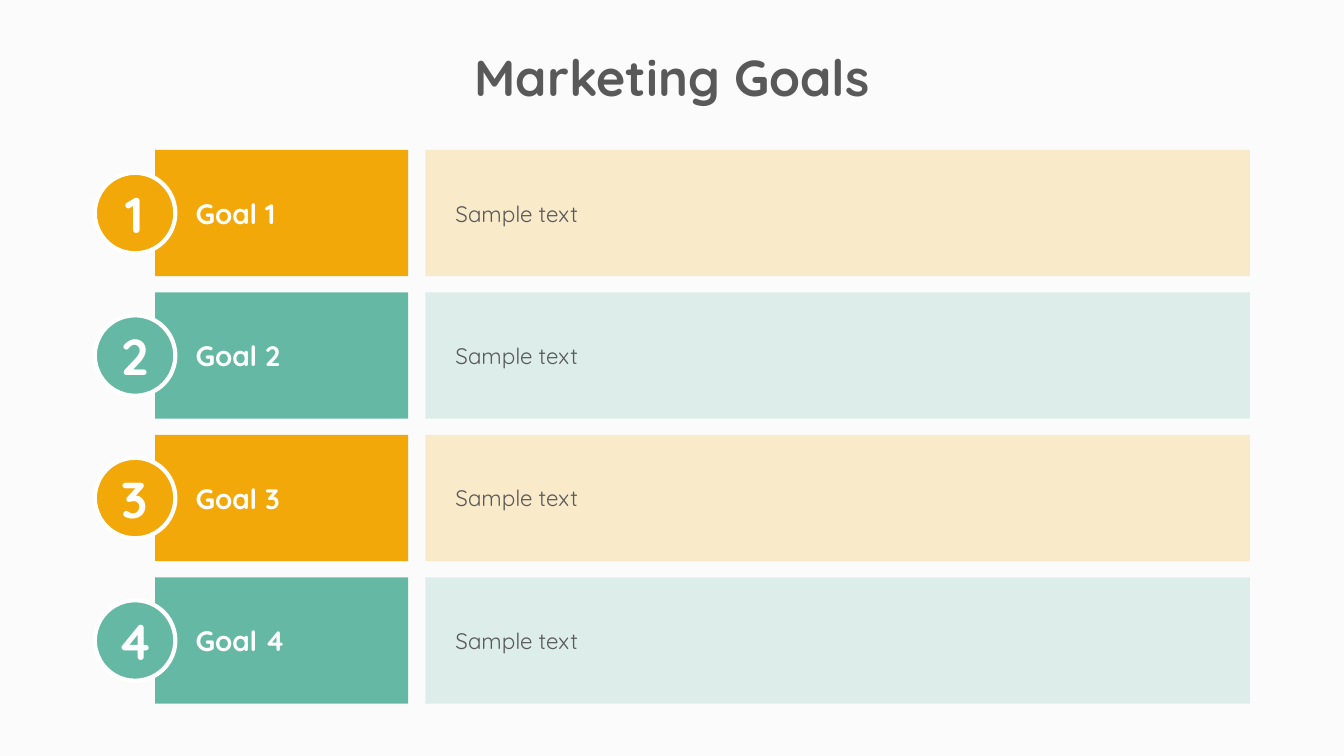
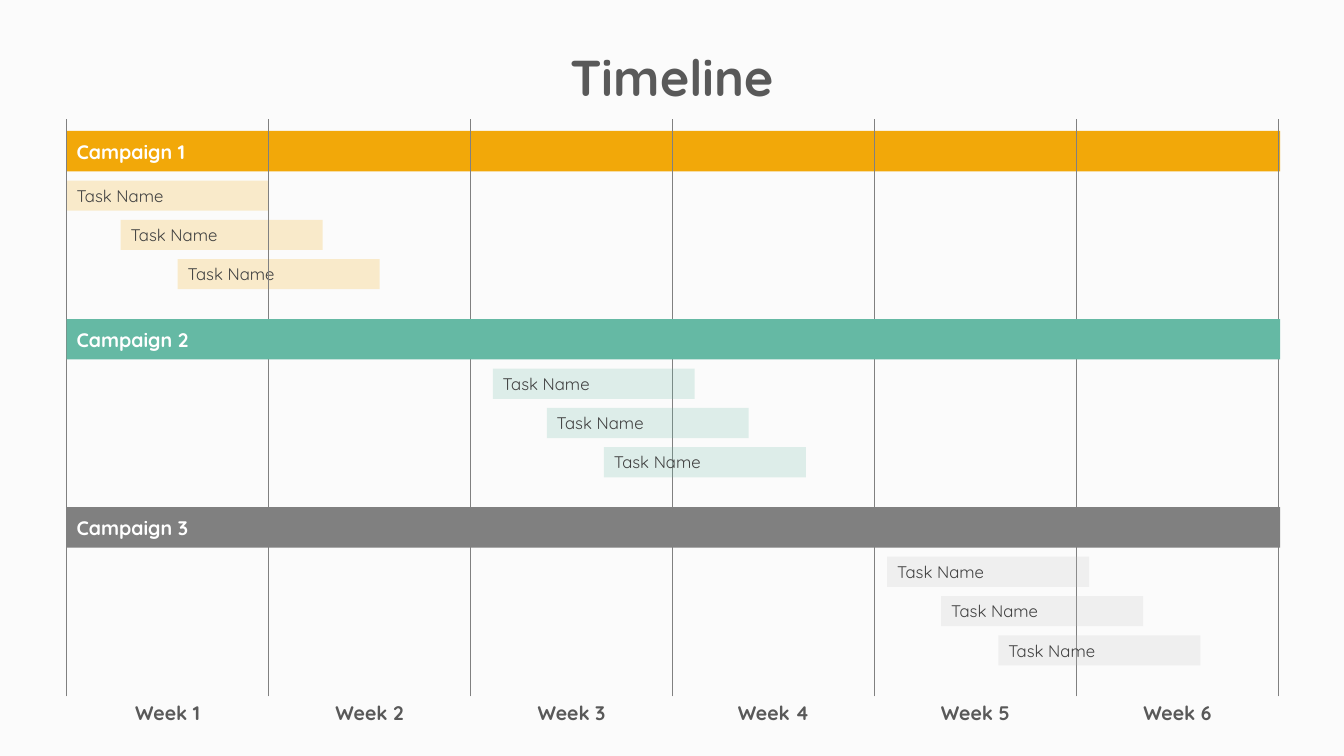
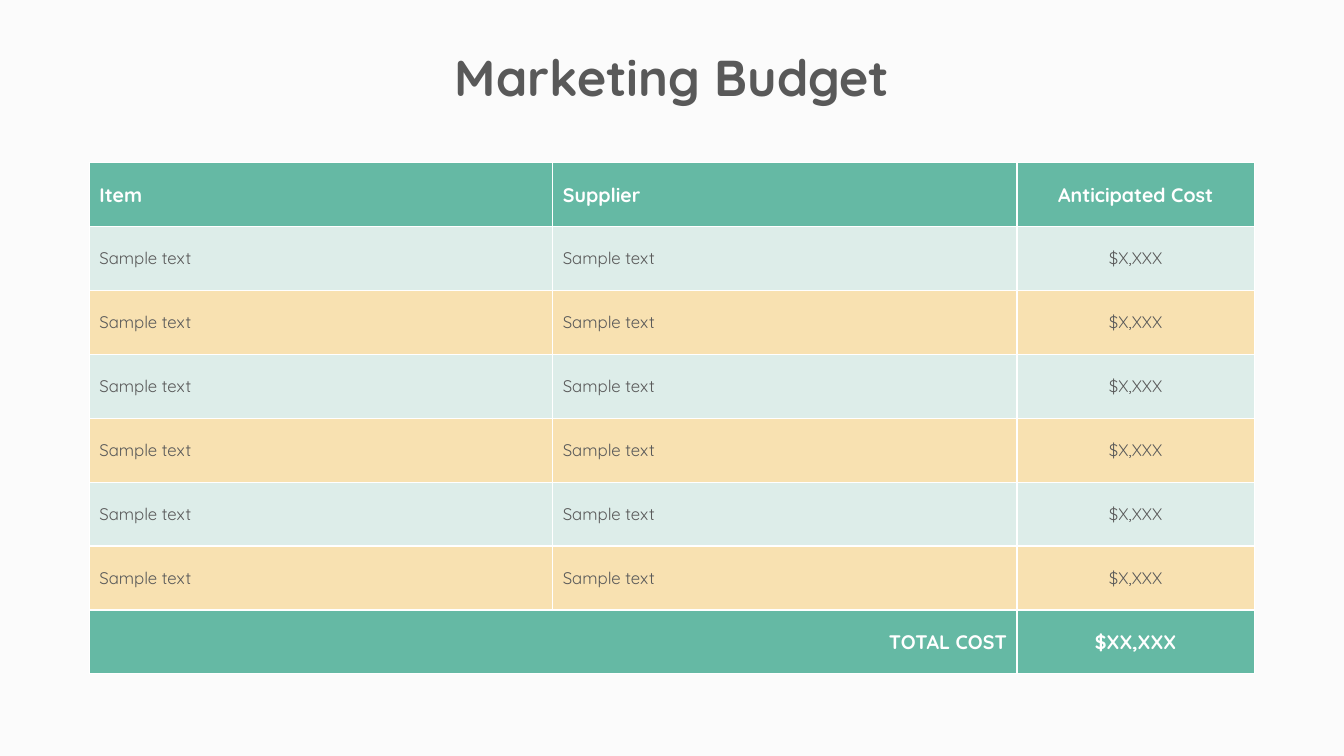
from dataclasses import dataclass

from pptx import Presentation
from pptx import util as u
from pptx.dml.color import RGBColor
from pptx.enum import shapes, text
from pptx.oxml import parse_xml
from pptx.oxml.ns import nsdecls, qn

Cm, Pt = u.Cm, u.Pt
LEFT, CENTER, RIGHT = text.PP_ALIGN.LEFT, text.PP_ALIGN.CENTER, text.PP_ALIGN.RIGHT


@dataclass(frozen=True)
class Theme:
    font: str = "Quicksand"
    page: str = "FBFBFB"
    white: str = "FFFFFF"
    ink: str = "595959"
    dark: str = "404040"
    gold: str = "F2A809"
    green: str = "65B9A4"
    grey: str = "808080"
    silver: str = "BFBFBF"
    display: int = 36
    heading: int = 20
    body: int = 16
    label: int = 14
    small: int = 12
    tint: int = 20
    band: int = 30


@dataclass(frozen=True)
class Box:
    """A region of the page, in centimetres."""
    left: float
    top: float
    width: float
    height: float

    def inner(self, left, top, width, height):
        return Box(self.left + left, self.top + top, width, height)

    def lengths(self):
        return [Cm(side) for side in (self.left, self.top, self.width, self.height)]


THEME = Theme()
TITLE = Box(3.58, 1.02, 26.72, 1.8)


# Shared helpers
def rgb(colour):
    return RGBColor.from_string(colour)


def paint(fill, properties, colour, opacity=100):
    """Fill solidly; properties is the XML element that holds the fill."""
    fill.solid()
    fill.fore_color.rgb = rgb(colour)
    if opacity < 100:
        solid = properties.find(qn("a:solidFill"))
        solid[0].append(parse_xml(f'<a:alpha {nsdecls("a")} val="{opacity * 1000}"/>'))


def write(frame, words, *, size, colour, bold=False, align=LEFT):
    para = frame.paragraphs[0]
    para.alignment = align
    span = para.add_run()
    span.text = words
    span.font.name = THEME.font
    span.font.size = Pt(size)
    span.font.bold = bold
    span.font.color.rgb = rgb(colour)


def add_panel(page, box, fill, words, *, kind=shapes.MSO_SHAPE.RECTANGLE,
              opacity=100, inset=0.25, outline=None, **style):
    """Add a filled shape with vertically centred text."""
    panel = page.shapes.add_shape(kind, *box.lengths())
    panel.shadow.inherit = False
    paint(panel.fill, panel.element.spPr, fill, opacity)
    if outline:
        panel.line.color.rgb = rgb(outline)
        panel.line.width = Pt(3)
    else:
        panel.line.fill.background()
    frame = panel.text_frame
    frame.vertical_anchor = text.MSO_ANCHOR.MIDDLE
    frame.margin_left = frame.margin_right = Cm(inset)
    frame.word_wrap = True
    write(frame, words, **style)


def add_page(deck, layout, title):
    page = deck.slides.add_slide(layout)
    write(page.shapes.title.text_frame, title, size=THEME.display,
          colour=THEME.ink, bold=True, align=CENTER)
    return page


def prepare_layout(deck):
    """Set the page colour and title place once for all pages."""
    background = deck.slide_master.background.fill
    background.solid()
    background.fore_color.rgb = rgb(THEME.page)
    layout = deck.slide_layouts.get_by_name("Title Only")
    title = layout.placeholders[0]
    title.left, title.top, title.width, title.height = TITLE.lengths()
    title.text_frame.auto_size = text.MSO_AUTO_SIZE.NONE
    title.text_frame.vertical_anchor = text.MSO_ANCHOR.MIDDLE
    return layout


# Goals
def add_goals(page, box, goals):
    height, badge = 3.18, 2.03
    pitch = (box.height - height) / (len(goals) - 1)
    for index, (name, detail, colour) in enumerate(goals):
        row = box.inner(0, index * pitch, box.width, height)
        add_panel(page, row.inner(1.52, 0, 6.38, height), colour, name, inset=1.02,
                  size=THEME.heading, colour=THEME.white, bold=True)
        add_panel(page, row.inner(8.33, 0, box.width - 8.33, height), colour, detail,
                  opacity=THEME.tint, inset=0.76, size=THEME.body, colour=THEME.ink)
        add_panel(page, row.inner(0, (height - badge) / 2, badge, badge), colour,
                  str(index + 1), kind=shapes.MSO_SHAPE.OVAL, outline=THEME.white,
                  inset=0, size=THEME.display, colour=THEME.white, bold=True, align=CENTER)


# Timeline
def add_week_grid(page, box, weeks):
    step, label_width = box.width / weeks, 3.53
    lines = page.shapes.add_group_shape()
    for index in range(weeks + 1):
        x = Cm(box.left + index * step)
        line = lines.shapes.add_connector(shapes.MSO_CONNECTOR.STRAIGHT, x,
                                          Cm(box.top + box.height), x, Cm(box.top))
        line.line.color.rgb = rgb(THEME.grey)
        line.line.width = Pt(0.5)
        line.element.spPr.append(parse_xml(f'<a:effectLst {nsdecls("a")}/>'))
    for index in range(weeks):
        place = box.inner(index * step + (step - label_width) / 2, box.height,
                          label_width, 0.86)
        label = page.shapes.add_textbox(*place.lengths())
        label.text_frame.word_wrap = True
        write(label.text_frame, f"Week {index + 1}", size=THEME.label,
              colour=THEME.ink, bold=True, align=CENTER)


def add_campaign(page, box, name, colour, tint, start, task_width):
    add_panel(page, box.inner(0, 0, box.width, 1.02), colour, name,
              size=THEME.label, colour=THEME.white, bold=True)
    for index, delay in enumerate((0, 1.36, 2.8)):
        add_panel(page, box.inner(start + delay, 1.25 + index * 0.99, task_width, 0.76),
                  tint, "Task Name", opacity=THEME.tint,
                  size=THEME.small, colour=THEME.dark)


def add_timeline(page, box, campaigns, weeks):
    pitch = 4.74
    for index, campaign in enumerate(campaigns):
        # The grid crosses the first campaign and lies behind the others
        if index == 1:
            add_week_grid(page, box, weeks)
        row = box.inner(0, 0.3 + index * pitch, box.width + 0.04, pitch)
        add_campaign(page, row, *campaign, task_width=box.width / weeks)


# Budget
def add_cell_borders(properties):
    for index, side in enumerate(("lnL", "lnR", "lnT", "lnB")):
        properties.insert(index, parse_xml(
            f'<a:{side} {nsdecls("a")} w="12700"><a:solidFill>'
            f'<a:srgbClr val="{THEME.white}"/></a:solidFill></a:{side}>'))


def add_budget(page, box, rows, widths):
    holder = page.shapes.add_table(len(rows), len(widths), *box.lengths())
    table = holder.table
    table.horz_banding = False
    for column, width in zip(table.columns, widths):
        column.width = Cm(width)
    for row in table.rows:
        row.height = Cm(box.height / len(rows))

    last = len(rows) - 1
    elements = holder.element.iter(qn("a:tc"))
    for index, (cell, element) in enumerate(zip(table.iter_cells(), elements)):
        row, column = divmod(index, len(widths))
        strong = row in (0, last)
        properties = element.get_or_add_tcPr()
        if strong:
            paint(cell.fill, properties, THEME.green)
        elif row % 2:
            paint(cell.fill, properties, THEME.green, THEME.tint)
        else:
            paint(cell.fill, properties, THEME.gold, THEME.band)
        add_cell_borders(properties)
        cell.vertical_anchor = text.MSO_ANCHOR.MIDDLE
        if rows[row][column]:
            align = CENTER if column == 2 else RIGHT if row == last else LEFT
            write(cell.text_frame, rows[row][column], bold=strong, align=align,
                  size=THEME.label if strong else THEME.small,
                  colour=THEME.white if strong else THEME.ink)
    table.cell(last, 0).merge(table.cell(last, 1))


def main():
    deck = Presentation()
    deck.slide_width, deck.slide_height = Cm(33.87), Cm(19.05)
    layout = prepare_layout(deck)

    goals = [(f"Goal {number}", "Sample text", THEME.gold if number % 2 else THEME.green)
             for number in range(1, 5)]
    add_goals(add_page(deck, layout, "Marketing Goals"),
              Box(2.39, 3.78, 29.11, 13.95), goals)

    campaigns = [("Campaign 1", THEME.gold, THEME.gold, 0),
                 ("Campaign 2", THEME.green, THEME.green, 10.74),
                 ("Campaign 3", THEME.grey, THEME.silver, 20.68)]
    add_timeline(add_page(deck, layout, "Timeline"),
                 Box(1.68, 3, 30.54, 14.55), campaigns, weeks=6)

    budget = [("Item", "Supplier", "Anticipated Cost"),
              *[("Sample text", "Sample text", "$X,XXX")] * 6,
              ("TOTAL COST", "", "$XX,XXX")]
    add_budget(add_page(deck, layout, "Marketing Budget"),
               Box(2.25, 4.1, 29.36, 12.88), budget, widths=(11.68, 11.7, 5.98))

    deck.save("out.pptx")


if __name__ == "__main__":
    main()
